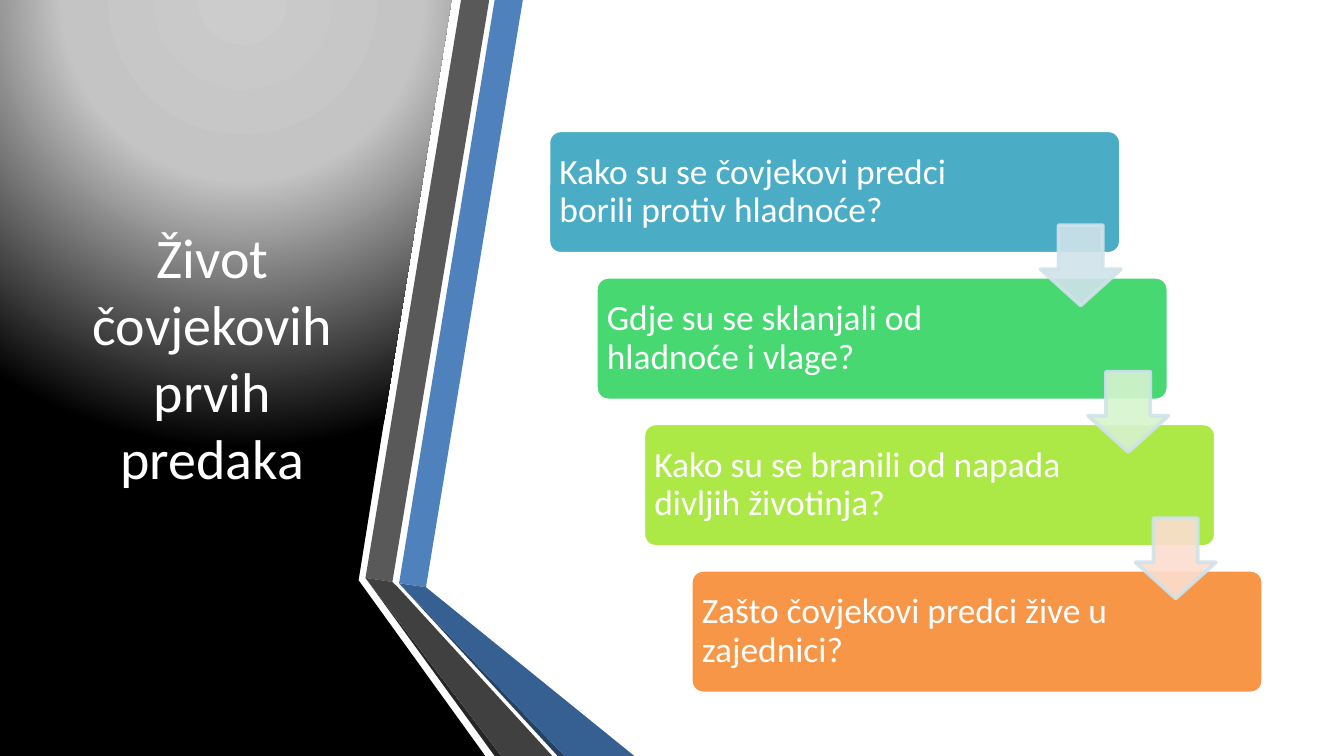
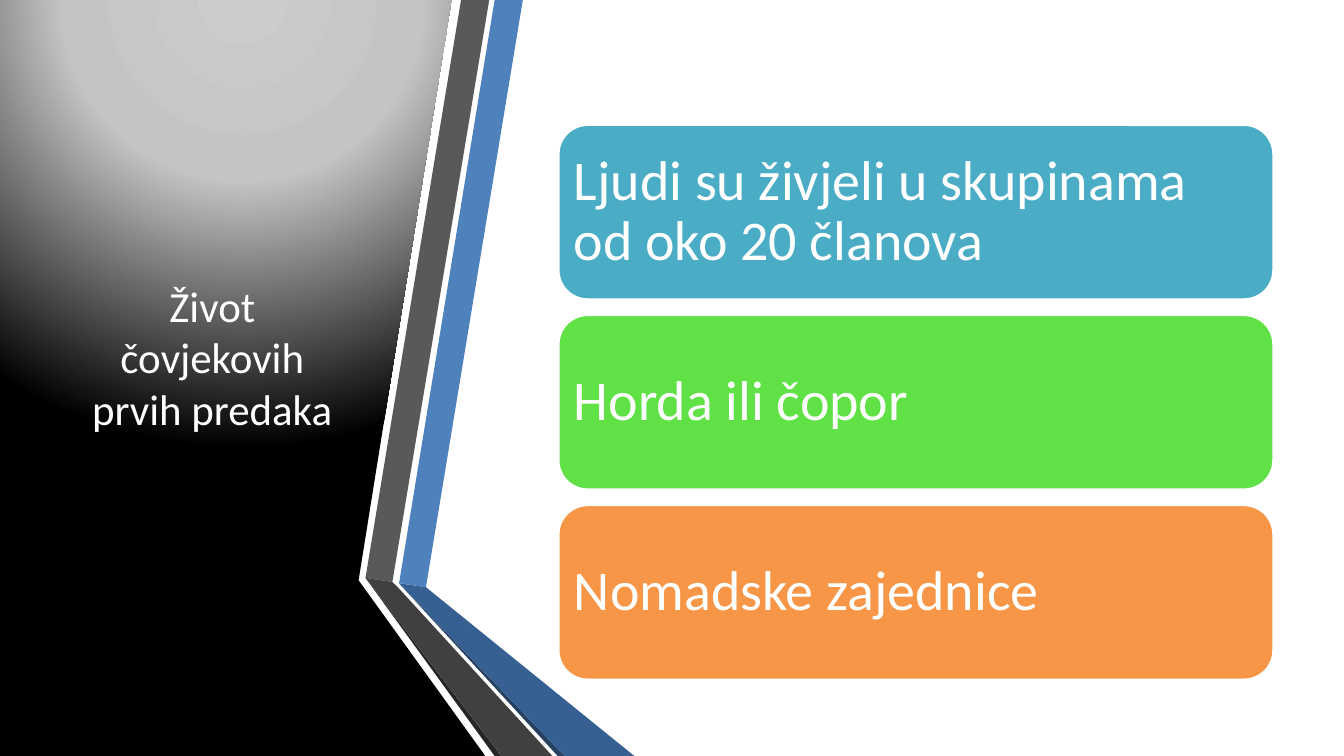
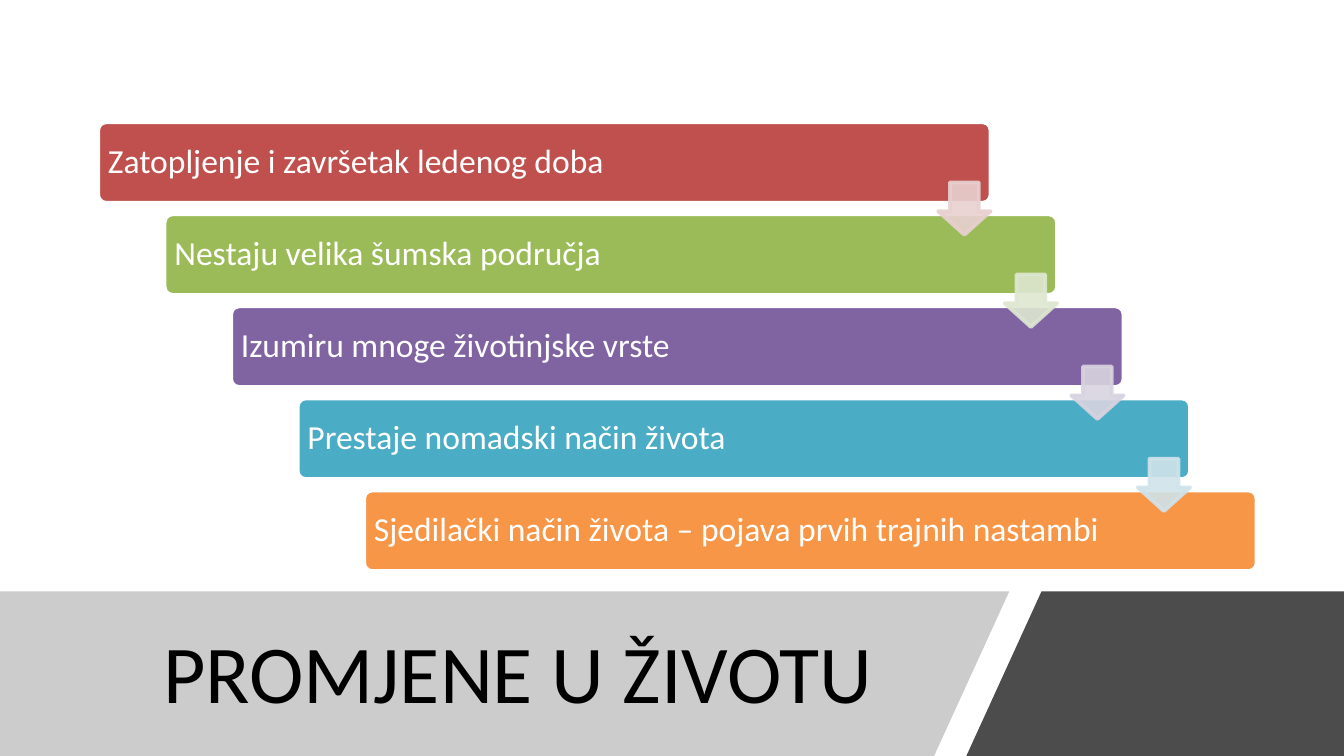
import collections

import pptx
import pptx.dml.color
import pptx.enum.shapes
import pptx.enum.text
import pptx.oxml
import pptx.oxml.ns
import pptx.util
from lxml import etree

Pt = pptx.util.Pt
SHAPE = pptx.enum.shapes.MSO_SHAPE
ALIGN = pptx.enum.text.PP_ALIGN
qn = pptx.oxml.ns.qn

Box = collections.namedtuple("Box", "left top width height")
PAGE = Box(0, 0, 720, 405)
SIDE_TITLE = Box(31.7, 40.3, 164.2, 301.7)

FONT = "Calibri"
WHITE, BLACK = "FFFFFF", "000000"
RED, OLIVE, PURPLE = "C0504D", "9BBB59", "8064A2"
TEAL, ORANGE = "4BACC6", "F79646"
PALE_TEAL = "D0E3EA"

# Joints where the upper and lower halves of the ribbons meet
GREY_LEFT, GREY_RIGHT = (195.8, 309.6), (210.2, 311.8)
BLUE_LEFT, BLUE_RIGHT = (213.8, 312.5), (228.2, 314.6)

SIDE_PANEL = [(0, 0), (241.9, 0), (192.2, 310.5), (192.2, 311), (260, 405), (0, 405)]
RIBBONS = [
    ("4F81BD", [BLUE_LEFT, BLUE_RIGHT, (280.1, 0), (265, 0)]),
    ("595959", [(262.1, 0), (247, 0), GREY_LEFT, GREY_RIGHT]),
    ("262626", [GREY_LEFT, (265, 405), (268.6, 405)]),
    ("254061", [BLUE_LEFT, (298.8, 405), (302.4, 405)]),
    ("376092", [BLUE_LEFT, (302.4, 405), (339.8, 405), BLUE_RIGHT]),
    ("404040", [GREY_LEFT, (268.6, 405), (295.9, 405), (213.1, 314.6), GREY_RIGHT]),
]
PANEL_STOPS = [(0, "CCCCCC"), (40, "C4C4C4"), (100, BLACK)]


def rgb(colour):
    return pptx.dml.color.RGBColor.from_string(colour)


def paint(shape, fill, line=None, opacity=100):
    """Set a solid fill and an optional 2 pt line, without a shadow."""
    shape.shadow.inherit = False
    shape.fill.solid()
    shape.fill.fore_color.rgb = rgb(fill)
    if line:
        shape.line.color.rgb = rgb(line)
        shape.line.width = Pt(2)
    else:
        shape.line.fill.background()
    if opacity < 100:
        for colour in shape.element.spPr.iter(qn("a:srgbClr")):
            etree.SubElement(colour, qn("a:alpha"), val=str(opacity * 1000))


def paint_glow(shape, stops):
    """Replace the solid fill by a circular gradient centred above the top edge."""
    marks = "".join(
        f'<a:gs pos="{place * 1000}"><a:srgbClr val="{colour}"/></a:gs>'
        for place, colour in stops
    )
    gradient = pptx.oxml.parse_xml(
        f'<a:gradFill {pptx.oxml.ns.nsdecls("a")} rotWithShape="1">'
        f'<a:gsLst>{marks}</a:gsLst><a:path path="circle">'
        '<a:fillToRect l="50000" t="-80000" r="50000" b="180000"/>'
        '</a:path></a:gradFill>'
    )
    properties = shape.element.spPr
    properties.replace(properties.find(qn("a:solidFill")), gradient)


def add_outline(page, box, points, fill, opacity=100):
    """Draw a closed polygon whose points count from the corner of the box."""
    corners = [(Pt(box.left + x), Pt(box.top + y)) for x, y in points]
    builder = page.shapes.build_freeform(*corners[0])
    builder.add_line_segments(corners[1:], close=True)
    shape = builder.convert_to_shape()
    paint(shape, fill, opacity=opacity)
    return shape


def add_preset(page, kind, box, adjustments):
    shape = page.shapes.add_shape(kind, *map(Pt, box))
    for index, value in enumerate(adjustments):
        shape.adjustments[index] = value
    return shape


def write(frame, text, size, colour, align):
    frame.word_wrap = True
    frame.auto_size = pptx.enum.text.MSO_AUTO_SIZE.NONE
    frame.vertical_anchor = pptx.enum.text.MSO_ANCHOR.MIDDLE
    para = frame.paragraphs[0]
    para.alignment = align
    span = para.add_run()
    span.text = text
    span.font.name = FONT
    span.font.size = Pt(size)
    span.font.color.rgb = rgb(colour)
    return para


def add_title(page, box, text, size, colour):
    """Fill the title placeholder and bring it in front of the backdrop."""
    title = page.shapes.title
    title.left, title.top, title.width, title.height = map(Pt, box)
    write(title.text_frame, text, size, colour, ALIGN.CENTER)
    title.text_frame.margin_left = title.text_frame.margin_right = Pt(8)
    title.element.getparent().append(title.element)


def add_side_backdrop(page, box):
    panel = add_outline(page, box, SIDE_PANEL, BLACK)
    paint_glow(panel, PANEL_STOPS)
    for colour, points in RIBBONS:
        add_outline(page, box, points, colour)


def add_bottom_band(page, box):
    """Draw the light title band and the dark corner, both with a slanted edge."""
    light = [(0, 0), (540.7, 0), (500.4, box.height), (0, box.height)]
    dark = [(558, 0), (box.width, 0), (box.width, box.height), (517.7, box.height)]
    add_outline(page, box, light, "808080", opacity=40)
    add_outline(page, box, dark, BLACK, opacity=70)


def add_bars(page, box, bar_size, entries, text_size, rounding, right_margin):
    """Spread bars evenly from the top left to the bottom right of the box."""
    width, height = bar_size
    gaps = len(entries) - 1
    step_x = (box.width - width) / gaps
    step_y = (box.height - height) / gaps
    bars = []
    for index, (text, colour) in enumerate(entries):
        bar = Box(box.left + index * step_x, box.top + index * step_y, width, height)
        shape = add_preset(page, SHAPE.ROUNDED_RECTANGLE, bar, [rounding])
        paint(shape, colour, WHITE)
        frame = shape.text_frame
        frame.margin_left = frame.margin_top = frame.margin_bottom = Pt(4)
        frame.margin_right = Pt(right_margin)
        write(frame, text, text_size, WHITE, ALIGN.LEFT).line_spacing = 0.9
        bars.append(bar)
    return bars


def add_staircase(page, box, bar_size, entries, text_size, arrows):
    """Draw stepped bars with an arrow over each gap, flush with the upper bar."""
    bars = add_bars(page, box, bar_size, entries, text_size, 0.1, 72)
    side = 0.65 * bar_size[1]
    for upper, lower, (fill, line) in zip(bars, bars[1:], arrows):
        middle = (upper.top + upper.height + lower.top) / 2
        place = Box(upper.left + upper.width - side, middle - side / 2, side, side)
        # Height share of the head first, then width share of the shaft
        arrow = add_preset(page, SHAPE.DOWN_ARROW, place, [0.55, 0.45])
        paint(arrow, fill, line, opacity=90)


def add_page(deck):
    return deck.slides.add_slide(deck.slide_layouts.get_by_name("Title Only"))


def add_questions_page(deck):
    page = add_page(deck)
    add_side_backdrop(page, PAGE)
    add_title(page, SIDE_TITLE, "Život čovjekovih prvih predaka", 30, WHITE)
    questions = [
        ("Kako su se čovjekovi predci borili protiv hladnoće?", TEAL),
        ("Gdje su se sklanjali od hladnoće i vlage?", "47D872"),
        ("Kako su se branili od napada divljih životinja?", "ACE946"),
        ("Zašto čovjekovi predci žive u zajednici?", ORANGE),
    ]
    arrows = [(fill, PALE_TEAL) for fill in (PALE_TEAL, "D6F4CE", "FCDDCF")]
    add_staircase(page, Box(293.8, 69.8, 383, 301.7), (306.7, 66.2), questions, 19, arrows)


def add_groups_page(deck):
    page = add_page(deck)
    add_side_backdrop(page, PAGE)
    add_title(page, SIDE_TITLE, "Život čovjekovih prvih predaka", 23, WHITE)
    facts = [
        ("Ljudi su živjeli u skupinama od oko 20 članova", TEAL),
        ("Horda ili čopor", "60E146"),
        ("Nomadske zajednice", ORANGE),
    ]
    add_bars(page, Box(298.8, 66.5, 383.8, 298), (383.8, 94.3), facts, 30, 0.17, 4)


def add_changes_page(deck):
    page = add_page(deck)
    add_bottom_band(page, Box(0, 316.8, PAGE.width, 88.2))
    add_title(page, Box(49.7, 326.9, 455.8, 64.8), "PROMJENE U ŽIVOTU", 44, BLACK)
    changes = [
        ("Zatopljenje i završetak ledenog doba", RED),
        ("Nestaju velika šumska područja", OLIVE),
        ("Izumiru mnoge životinjske vrste", PURPLE),
        ("Prestaje nomadski način života", TEAL),
        ("Sjedilački način života – pojava prvih trajnih nastambi", ORANGE),
    ]
    arrows = [(tint, tint) for tint in ("E8D0D0", "DEE7D1", "D8D3E0", PALE_TEAL)]
    add_staircase(page, Box(52.6, 65.5, 620.6, 240.5), (478.1, 43.2), changes, 18, arrows)


def main():
    deck = pptx.Presentation()
    deck.slide_width, deck.slide_height = Pt(PAGE.width), Pt(PAGE.height)
    add_questions_page(deck)
    add_groups_page(deck)
    add_changes_page(deck)
    deck.save("out.pptx")


if __name__ == "__main__":
    main()
